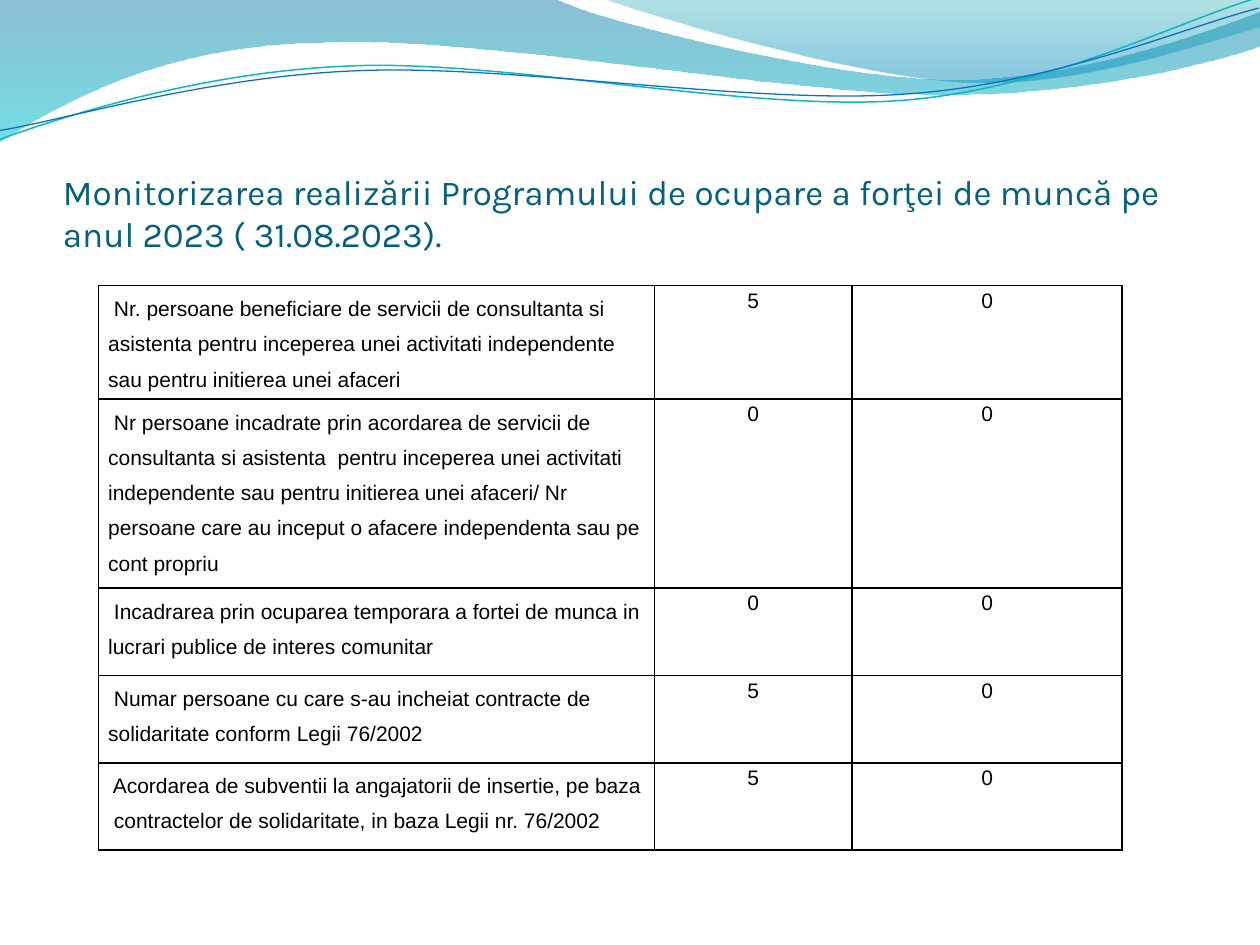
from collections import namedtuple

from lxml import etree
from pptx import Presentation
from pptx.dml.color import RGBColor
from pptx.enum.text import MSO_ANCHOR, PP_ALIGN
from pptx.oxml import parse_xml
from pptx.oxml.ns import nsdecls, qn
from pptx.util import Cm, Pt

BOTTOM = MSO_ANCHOR.BOTTOM
LEFT, CENTER = PP_ALIGN.LEFT, PP_ALIGN.CENTER

Box = namedtuple("Box", "left top width height")

COLORS = {
    "title": "04617B", "text": "000000", "border": "000000",
    "wave_blue": "0074A1", "wave_cyan": "00C6CF",
    "crest_teal": "00A1A9", "crest_blue": "008BBF",
    "line_teal": "0AB8BF", "line_blue": "0F6FC6",
}
LINE_TILT = 357.3

WAVES = [
    ([(0, -0.01), (4.4, -0.01), (4.76, 0.17, 6.64, 0.63, 7.58, 0.63),
      (8.53, 0.63, 9.58, 0.26, 10, 0.09), (10.01, 0.36),
      (9.83, 0.44, 8.7, 0.76, 7.46, 0.75), (6.22, 0.75, 3.82, 0.28, 2.57, 0.34),
      (1.29, 0.35, 0.46, 0.83, -0.01, 1.13), (0, -0.01)],
     [("wave_blue", 0, 45), ("wave_cyan", 1, 55)]),
    ([(4.79, -0.01), (5.09, 0.11, 6.82, 0.62, 7.69, 0.65),
      (8.56, 0.69, 9.61, 0.32, 10, 0.21), (10, 0), (4.79, -0.01)],
     [("crest_teal", 0, 30), ("crest_blue", 0.8, 45)]),
]
WAVE_LINES = [
    ([(-0.02, 0.87), (0.47, 0.72, 1.58, 0.41, 2.78, 0.42),
      (3.96, 0.42, 5.91, 0.93, 7.12, 0.9), (8.32, 0.87, 9.4, 0.36, 10, 0.22)],
     "line_teal", 0.85),
    ([(-0.02, 0.8), (0.46, 0.75, 1.64, 0.45, 2.83, 0.46),
      (4.03, 0.46, 5.96, 0.88, 7.16, 0.85), (8.35, 0.83, 9.42, 0.42, 10.01, 0.3)],
     "line_blue", 0.75),
]

TITLE = ("Monitorizarea realizării Programului de ocupare a forţei de muncă pe  "
         "anul 2023 ( 31.08.2023).")
COLUMN_WIDTHS = [11.2, 3.99, 5.44]
ROWS = [
    (2.28, " Nr. persoane beneficiare de servicii de consultanta si asistenta pentru "
     "inceperea unei activitati independente sau pentru initierea unei afaceri", "5", "0"),
    (3.81, " Nr persoane incadrate prin acordarea de servicii de consultanta si asistenta  "
     "pentru inceperea unei activitati independente sau pentru initierea unei afaceri/ "
     "Nr persoane care au inceput o afacere independenta sau pe cont propriu", "0", "0"),
    (1.76, " Incadrarea prin ocuparea temporara a fortei de munca in lucrari publice "
     "de interes comunitar", "0", "0"),
    (1.76, " Numar persoane cu care s-au incheiat contracte de solidaritate "
     "conform Legii 76/2002", "5", "0"),
    (1.76, " Acordarea de subventii la angajatorii de insertie, pe baza "
     " contractelor de solidaritate, in baza Legii nr. 76/2002", "5", "0"),
]


def color(name):
    """Return the named colour."""
    return RGBColor.from_string(COLORS[name])


def add_outline(page, box, segments, close):
    """Draw lines and cubic curves given in tenths of the box width."""
    unit = box.width / 10
    points = [(Cm(box.left + x * unit), Cm(box.top + y * unit))
              for segment in segments for x, y in zip(segment[::2], segment[1::2])]
    builder = page.shapes.build_freeform(*points[0])
    builder.add_line_segments(points[1:], close=close)
    shape = builder.convert_to_shape()
    shape.shadow.inherit = False
    steps = iter(list(shape.element.spPr.iter(qn("a:lnTo"))))
    for segment in segments[1:]:
        first = next(steps)
        if len(segment) == 6:
            curve = etree.Element(qn("a:cubicBezTo"))
            first.addprevious(curve)
            for step in (first, next(steps), next(steps)):
                curve.append(step[0])
                step.getparent().remove(step)
    return shape


def add_waves(page, box):
    """Draw the translucent waves and the two thin lines over them."""
    for segments, stops in WAVES:
        wave = add_outline(page, box, segments, True)
        wave.line.fill.background()
        wave.fill.gradient()
        wave.fill.gradient_angle = 270
        for stop, (name, position, _) in zip(wave.fill.gradient_stops, stops):
            stop.color.rgb = color(name)
            stop.position = position
        tints = wave.element.spPr.iter(qn("a:srgbClr"))
        for tint, (_, _, opacity) in zip(list(tints), stops):
            etree.SubElement(tint, qn("a:alpha")).set("val", str(opacity * 1000))
    for segments, name, weight in WAVE_LINES:
        line = add_outline(page, box, segments, False)
        line.rotation = LINE_TILT
        line.fill.background()
        line.line.color.rgb = color(name)
        line.line.width = Pt(weight)


def write(para, text, font, size, name):
    """Add one formatted run to a paragraph."""
    span = para.add_run()
    span.text = text
    span.font.name = font
    span.font.size = Pt(size)
    span.font.color.rgb = color(name)


def add_title(page, box):
    """Place the bottom-anchored title."""
    frame = page.shapes.add_textbox(*map(Cm, box)).text_frame
    frame.word_wrap = True
    frame.vertical_anchor = BOTTOM
    frame.margin_left = frame.margin_right = frame.margin_bottom = 0
    frame.margin_top = Cm(0.13)
    write(frame.paragraphs[0], TITLE, "Karla", 20, "title")


def add_borders(cell):
    """Give a cell thin borders on all four sides."""
    properties = cell._tc.get_or_add_tcPr()
    for index, side in enumerate("LRTB"):
        properties.insert(index, parse_xml(
            f'<a:ln{side} {nsdecls("a")} w="{Pt(1)}"><a:solidFill>'
            f'<a:srgbClr val="{COLORS["border"]}"/></a:solidFill></a:ln{side}>'))


def add_indicators(page, box):
    """Place the table of indicators and their values."""
    frame = page.shapes.add_table(len(ROWS), len(COLUMN_WIDTHS), *map(Cm, box))
    table = frame.table
    table.first_row = table.horz_banding = False
    for column, width in zip(table.columns, COLUMN_WIDTHS):
        column.width = Cm(width)
    for row, (height, *texts) in zip(table.rows, ROWS):
        row.height = Cm(height)
        for index, (cell, text) in enumerate(zip(row.cells, texts)):
            cell.fill.background()
            add_borders(cell)
            cell.margin_left = cell.margin_right = Cm(0.19)
            cell.margin_top = cell.margin_bottom = 0
            para = cell.text_frame.paragraphs[0]
            para.alignment = CENTER if index else LEFT
            para.line_spacing = 1.15 if index else 1.5
            write(para, text, "Arial", 12, "text")


def main():
    """Build and save the slide."""
    deck = Presentation()
    deck.slide_width, deck.slide_height = Cm(25.4), Cm(19.05)
    page = deck.slides.add_slide(deck.slide_layouts[6])
    add_waves(page, Box(0, 0, 25.4, 2.87))
    add_title(page, Box(1.27, 1.96, 22.86, 3.18))
    add_indicators(page, Box(1.99, 5.76, sum(COLUMN_WIDTHS), sum(row[0] for row in ROWS)))
    deck.save("out.pptx")


if __name__ == "__main__":
    main()
